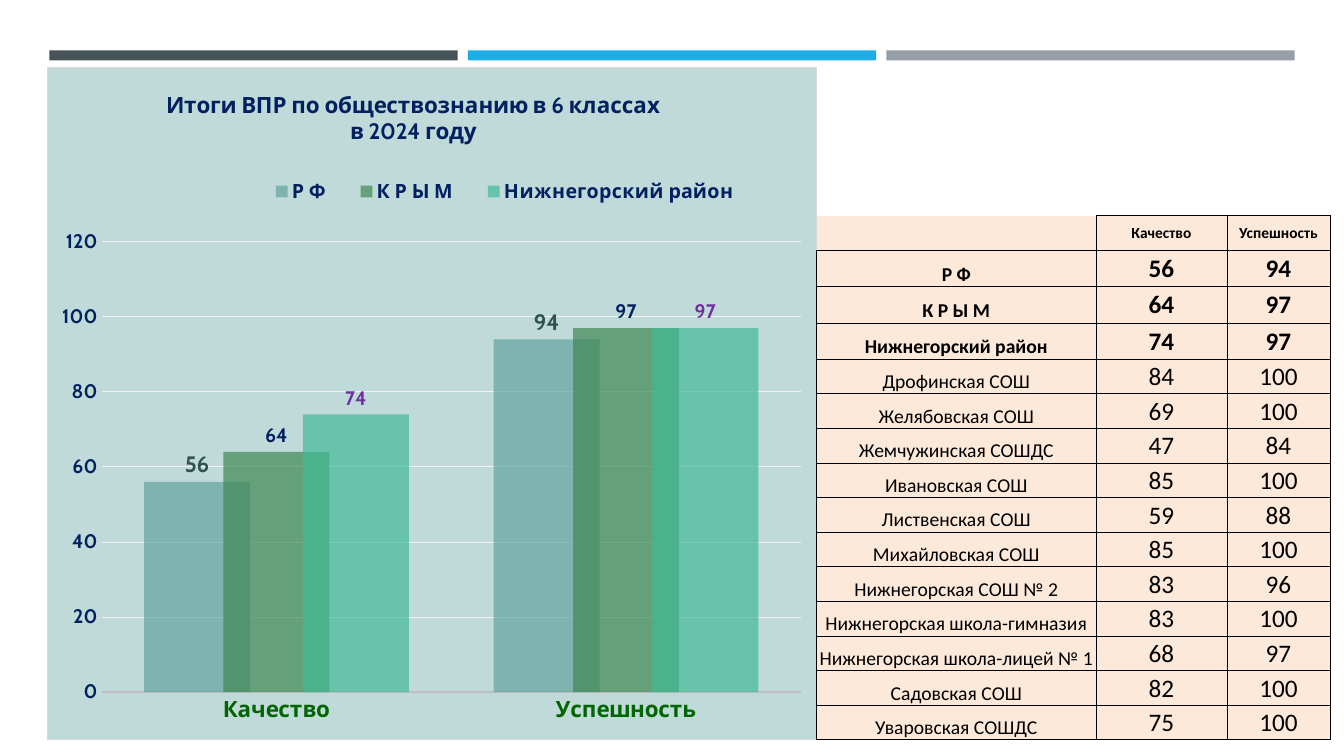
from dataclasses import dataclass

from lxml.etree import SubElement
from pptx import Presentation
from pptx.chart.data import CategoryChartData
from pptx.dml.color import RGBColor
from pptx.enum.chart import XL_CHART_TYPE, XL_LABEL_POSITION, XL_LEGEND_POSITION, XL_TICK_MARK
from pptx.enum.shapes import MSO_SHAPE
from pptx.enum.text import MSO_ANCHOR, PP_ALIGN
from pptx.oxml import parse_xml
from pptx.oxml.ns import nsdecls, qn
from pptx.util import Inches, Pt

TITLE = ["Итоги ВПР по обществознанию в 6 классах", "в 2024 году"]
MEASURES = ["Качество", "Успешность"]
RESULTS = [
    ("Р Ф", 56, 94),
    ("К Р Ы М", 64, 97),
    ("Нижнегорский район", 74, 97),
    ("Дрофинская СОШ", 84, 100),
    ("Желябовская СОШ", 69, 100),
    ("Жемчужинская СОШДС", 47, 84),
    ("Ивановская СОШ", 85, 100),
    ("Лиственская СОШ", 59, 88),
    ("Михайловская СОШ", 85, 100),
    ("Нижнегорская СОШ № 2", 83, 96),
    ("Нижнегорская школа-гимназия", 83, 100),
    ("Нижнегорская школа-лицей № 1", 68, 97),
    ("Садовская СОШ", 82, 100),
    ("Уваровская СОШДС", 75, 100),
]
SUMMARY_COUNT = 3
SERIES_STYLES = [("62A39F", "305250", 16), ("3E8853", "002060", 14), ("42BA97", "7030A0", 14)]
COLUMN_WIDTHS = [2.77, 1.3, 1.02]
TABLE_HEIGHT, SUMMARY_HEIGHT = 5.2, 0.36


@dataclass(frozen=True)
class Theme:
    """Colours, fonts and type sizes of the slide."""
    chart_font: str = "Cabin"
    table_font: str = "Calibri"
    bars: tuple = ("465359", "1CADE4", "969FA7")
    panel: str = "C0DAD9"
    panel_edge: str = "D9D9D9"
    grid: str = "F2F2F2"
    axis: str = "BFBFBF"
    navy: str = "002060"
    green: str = "006600"
    cell: str = "FDE9D9"
    black: str = "000000"
    large: int = 16
    medium: int = 14
    header: int = 11
    value: int = 18


THEME = Theme()


def style_font(font, name, size, color, bold=True):
    """Apply typeface, size, colour and weight."""
    font.name, font.size, font.bold = name, Pt(size), bold
    font.color.rgb = RGBColor.from_string(color)


def style_line(line, color, width):
    """Apply a solid line colour and width."""
    line.color.rgb = RGBColor.from_string(color)
    line.width = Pt(width)


def make_layout(x, y, width=None, height=None, inner=False):
    """Return a manual chart layout in fractions of the chart."""
    layout = parse_xml(f"<c:layout {nsdecls('c')}><c:manualLayout/></c:layout>")
    settings = [("layoutTarget", "inner")] if inner else []
    settings += [("xMode", "edge"), ("yMode", "edge"), ("x", x), ("y", y)]
    if width:
        settings += [("w", width), ("h", height)]
    for tag, value in settings:
        SubElement(layout[0], qn(f"c:{tag}")).set("val", str(value))
    return layout


def add_bars(page):
    """Draw the three evenly spaced header bars."""
    for index, color in enumerate(THEME.bars):
        bar = page.shapes.add_shape(MSO_SHAPE.RECTANGLE, Inches(0.49 + 4.15 * index),
                                    Inches(0.5), Inches(4.05), Inches(0.1))
        bar.shadow.inherit = False
        bar.fill.solid()
        bar.fill.fore_color.rgb = RGBColor.from_string(color)
        bar.line.fill.background()


def style_axes(chart):
    """Format the category and value axes."""
    categories, values = chart.category_axis, chart.value_axis
    for axis, size, color in ((categories, THEME.large, THEME.green),
                              (values, THEME.medium, THEME.navy)):
        axis.major_tick_mark = axis.minor_tick_mark = XL_TICK_MARK.NONE
        style_font(axis.tick_labels.font, THEME.chart_font, size, color)
    style_line(categories.format.line, THEME.axis, 1.25)
    values.format.line.fill.background()
    values.minimum_scale, values.maximum_scale, values.major_unit = 0, 120, 20
    values.tick_labels.number_format = "0"
    values.tick_labels.number_format_is_linked = False
    style_line(values.major_gridlines.format.line, THEME.grid, 0.75)


def style_series(plot):
    """Format the columns and their value labels."""
    plot.gap_width, plot.overlap, plot.vary_by_categories = 80, 25, False
    for series, (fill, color, size) in zip(plot.series, SERIES_STYLES):
        series.format.fill.solid()
        series.format.fill.fore_color.rgb = RGBColor.from_string(fill)
        labels = series.data_labels
        labels.show_value = True
        labels.position = XL_LABEL_POSITION.OUTSIDE_END
        labels.number_format, labels.number_format_is_linked = "0", False
        style_font(labels.font, THEME.chart_font, size, color)


def arrange_chart(root):
    """Place the chart parts, fill the panel and make columns translucent."""
    for layout in root.xpath("c:chart/c:title/c:layout | c:chart/c:legend/c:layout"
                             " | c:chart/c:plotArea/c:layout"):
        layout.getparent().remove(layout)
    root.xpath("c:chart/c:title/c:tx")[0].addnext(make_layout(0.15, 0.03))
    root.xpath("c:chart/c:legend/c:legendPos")[0].addnext(make_layout(0.26, 0.14, 0.67, 0.09))
    root.xpath("c:chart/c:plotArea")[0].insert(0, make_layout(0.07, 0.26, 0.91, 0.67, True))
    for color in root.xpath(".//c:ser/c:spPr/a:solidFill/a:srgbClr"):
        SubElement(color, qn("a:alpha")).set("val", "70000")
    root.xpath("c:chart")[0].addnext(parse_xml(
        f'<c:spPr {nsdecls("c", "a")}><a:solidFill><a:srgbClr val="{THEME.panel}"/></a:solidFill>'
        f'<a:ln w="{Pt(0.75)}"><a:solidFill><a:srgbClr val="{THEME.panel_edge}"/></a:solidFill>'
        '</a:ln></c:spPr>'))


def add_results_chart(page):
    """Add the column chart of the summary results."""
    data = CategoryChartData(number_format="0")
    data.categories = MEASURES
    for name, *values in RESULTS[:SUMMARY_COUNT]:
        data.add_series(name, values)
    chart = page.shapes.add_chart(XL_CHART_TYPE.COLUMN_CLUSTERED, Inches(0.47), Inches(0.66),
                                  Inches(7.63), Inches(6.68), data).chart
    style_font(chart.font, THEME.chart_font, 10, THEME.black, False)
    frame = chart.chart_title.text_frame
    for index, line in enumerate(TITLE):
        para = frame.add_paragraph() if index else frame.paragraphs[0]
        para.alignment = PP_ALIGN.CENTER
        span = para.add_run()
        span.text = line
        style_font(span.font, THEME.chart_font, THEME.large, THEME.navy)
    chart.has_legend = True
    chart.legend.position = XL_LEGEND_POSITION.TOP
    chart.legend.include_in_layout = False
    style_font(chart.legend.font, THEME.chart_font, THEME.medium, THEME.navy)
    style_axes(chart)
    style_series(chart.plots[0])
    arrange_chart(chart.element)


def style_cell(cell, hidden_sides=""):
    """Set the fill, margins and borders of a table cell."""
    cell.margin_left = cell.margin_right = cell.margin_top = Inches(0.01)
    cell.margin_bottom = 0
    properties = cell._tc.get_or_add_tcPr()
    for side in "LRTB":
        paint = ("<a:noFill/>" if side in hidden_sides else
                 f'<a:solidFill><a:srgbClr val="{THEME.black}"/></a:solidFill>')
        properties.append(parse_xml(
            f'<a:ln{side} {nsdecls("a")} w="{Pt(0.5)}">{paint}</a:ln{side}>'))
    cell.fill.solid()
    cell.fill.fore_color.rgb = RGBColor.from_string(THEME.cell)


def add_results_table(page):
    """Add the table of regional and school results."""
    rows = [("", *MEASURES), *RESULTS]
    table = page.shapes.add_table(len(rows), len(COLUMN_WIDTHS), Inches(8.1), Inches(2.14),
                                  Inches(sum(COLUMN_WIDTHS)), Inches(TABLE_HEIGHT)).table
    table.first_row = table.horz_banding = False
    for column, width in zip(table.columns, COLUMN_WIDTHS):
        column.width = Inches(width)
    plain_height = (TABLE_HEIGHT - SUMMARY_COUNT * SUMMARY_HEIGHT) / (len(rows) - SUMMARY_COUNT)
    for row, values in enumerate(rows):
        summary = 1 <= row <= SUMMARY_COUNT
        table.rows[row].height = Inches(SUMMARY_HEIGHT if summary else plain_height)
        for column, value in enumerate(values):
            cell = table.cell(row, column)
            style_cell(cell, "LT" if row == column == 0 else "")
            cell.vertical_anchor = MSO_ANCHOR.MIDDLE if column else MSO_ANCHOR.BOTTOM
            if value == "":
                continue
            size = THEME.header if row == 0 else THEME.value if column else THEME.medium
            para = cell.text_frame.paragraphs[0]
            para.alignment = PP_ALIGN.CENTER
            span = para.add_run()
            span.text = str(value)
            style_font(span.font, THEME.table_font, size, THEME.black, row <= SUMMARY_COUNT)


def main():
    """Build and save the slide."""
    deck = Presentation()
    deck.slide_width, deck.slide_height = Inches(13.33), Inches(7.5)
    page = deck.slides.add_slide(deck.slide_layouts[6])
    add_bars(page)
    add_results_chart(page)
    add_results_table(page)
    deck.save("out.pptx")


if __name__ == "__main__":
    main()
